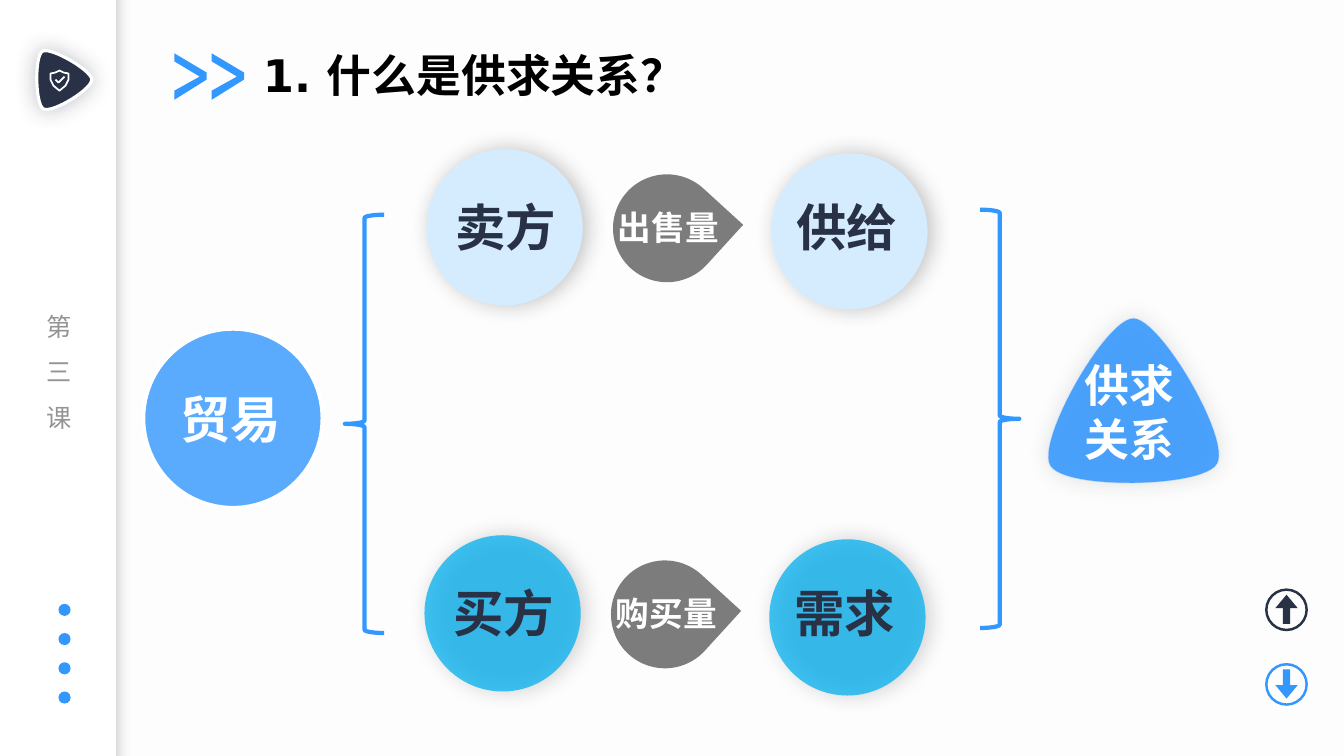
from lxml.etree import SubElement
from pptx import Presentation
from pptx.dml.color import RGBColor
from pptx.enum.shapes import MSO_SHAPE
from pptx.enum.text import MSO_ANCHOR, MSO_AUTO_SIZE, PP_ALIGN
from pptx.oxml.ns import qn
from pptx.util import Pt

EMU_PER_PX = 9144
COLORS = {
    "background": "FDFDFD", "white": "FFFFFF", "black": "000000",
    "blue": "3297FF", "navy": "283146", "pale": "D5EBFE", "cyan": "00B0F0",
    "gray": "7C7C7C", "label": "949494", "edge": "D9D9D9",
}


def px(length):
    """Turn px into EMU."""
    return round(length * EMU_PER_PX)


def rgb(name):
    """Look up a named colour."""
    return RGBColor.from_string(COLORS[name])


def set_alpha(shape, percent):
    """Make the colour set last on the shape partly transparent."""
    color = shape._element.spPr.findall(".//" + qn("a:srgbClr"))[-1]
    SubElement(color, qn("a:alpha")).set("val", str(percent * 1000))


def style(shape, fill=None, alpha=None, line=None, weight=1, line_alpha=None, shadow=None):
    """Set fill, line and shadow of a shape."""
    if fill:
        shape.fill.solid()
        shape.fill.fore_color.rgb = rgb(fill)
        if alpha:
            set_alpha(shape, alpha)
    else:
        shape.fill.background()
    if line:
        shape.line.color.rgb = rgb(line)
        shape.line.width = Pt(weight)
        if line_alpha:
            set_alpha(shape, line_alpha)
    else:
        shape.line.fill.background()
    shape.shadow.inherit = False
    if shadow:
        color, opacity, blur, distance = shadow
        effects = shape._element.spPr.find(qn("a:effectLst"))
        outer = SubElement(effects, qn("a:outerShdw"), blurRad=str(Pt(blur)),
                           dist=str(Pt(distance)), dir="0", algn="ctr", rotWithShape="0")
        SubElement(outer, qn("a:srgbClr"), val=COLORS[color])
        set_alpha(shape, opacity)
    return shape


def add_preset(slide, kind, left, top, width, height, **look):
    """Add a styled preset shape."""
    return style(slide.shapes.add_shape(kind, *map(px, (left, top, width, height))), **look)


def add_outline(slide, contours, closed=True, **look):
    """Add a styled freeform made of one or more contours."""
    builder = None
    for contour in contours:
        start, *rest = [(px(x), px(y)) for x, y in contour]
        if builder is None:
            builder = slide.shapes.build_freeform(*start)
        else:
            builder.move_to(*start)
        builder.add_line_segments(rest, close=closed)
    return style(builder.convert_to_shape(), **look)


def curve(points, steps=24):
    """Sample a chain of cubic curves given by end and control points."""
    sampled = [points[0]]
    for first in range(0, len(points) - 1, 3):
        a, b, c, d = points[first:first + 4]
        for step in range(1, steps + 1):
            t = step / steps
            s = 1 - t
            sampled.append(tuple(
                s**3 * a[i] + 3 * s * s * t * b[i] + 3 * s * t * t * c[i] + t**3 * d[i]
                for i in (0, 1)))
    return sampled


def format_font(paragraph, font, size, color, bold):
    """Format every run of a paragraph."""
    for run in paragraph.runs:
        run.font.name = font
        run.font.size = Pt(size)
        run.font.bold = bold
        run.font.color.rgb = rgb(color)


def add_label(slide, text, left, top, width, height, size, color, font="Arial", bold=True):
    """Add a wrapping text box."""
    frame = slide.shapes.add_textbox(*map(px, (left, top, width, height))).text_frame
    frame.word_wrap = True
    frame.text = text
    for paragraph in frame.paragraphs:
        format_font(paragraph, font, size, color, bold)
    return frame


def add_sidebar(slide):
    """Draw the left bar with its badge, lesson label and dots."""
    edge = add_preset(slide, MSO_SHAPE.RECTANGLE, 115, 0, 16, 750)
    edge.fill.gradient()
    edge.fill.gradient_angle = 0
    for stop, color in zip(edge.fill.gradient_stops, ("edge", "white")):
        stop.color.rgb = rgb(color)
    set_alpha(edge, 0)
    add_preset(slide, MSO_SHAPE.RECTANGLE, 0, 0, 115, 750, fill="white")
    for dot in range(4):
        add_preset(slide, MSO_SHAPE.OVAL, 58, 599 + 29 * dot, 12, 12, fill="blue")

    badge = [(42, 51), (50, 46), (91, 70), (91, 79), (91, 89),
             (51, 113), (43, 108), (35, 104), (34, 56), (42, 51)]
    add_outline(slide, [curve(badge)], fill="navy", line="white", weight=2.25,
                shadow=("navy", 29, 16, 0))
    shield = [(59, 70), (63, 72), (68, 73), (68, 79), (65, 85), (59, 90),
              (53, 85), (50, 79), (50, 73), (55, 72)]
    add_outline(slide, [shield], line="white", weight=1.25)
    add_outline(slide, [[(55, 79), (58, 82), (64, 76)]], closed=False, line="white", weight=1.25)

    lesson = add_label(slide, "第\n三\n课", 36, 289, 77, 146, 18, "label", "DejaVu Sans", False)
    for paragraph in lesson.paragraphs:
        paragraph.line_spacing = 1.5
        for run in paragraph.runs:
            run.font._element.set("spc", "100")


def add_title(slide):
    """Place the title and its double chevron."""
    title = slide.shapes.title
    title.left, title.top, title.width, title.height = map(px, (249, 42, 443, 64))
    frame = title.text_frame
    frame.text = "1. 什么是供求关系？"
    frame.word_wrap = False
    frame.auto_size = MSO_AUTO_SIZE.NONE
    frame.vertical_anchor = MSO_ANCHOR.TOP
    frame.paragraphs[0].alignment = PP_ALIGN.CENTER
    format_font(frame.paragraphs[0], "DejaVu Sans", 32, "black", True)
    chevron = [(173, 53), (205, 72), (205, 79), (173, 99), (173, 90), (198, 76), (173, 61)]
    add_outline(slide, [[(x + shift, y) for x, y in chevron] for shift in (0, 37)], fill="blue")


def add_trade_row(slide, left, top, party, amount, result, **look):
    """Draw one row: party, traded amount and resulting market side."""
    for name, dx, dy, text_dx in ((party, 0, 0, 19), (result, 342, 4, 357)):
        add_preset(slide, MSO_SHAPE.OVAL, left + dx, top + dy, 155, 155,
                   shadow=("black", 23, 16, 3), **look)
        add_label(slide, name, left + text_dx, top + 42, 123, 71, 36, "navy")
    drop = add_preset(slide, MSO_SHAPE.TEAR, left + 185, top + 25, 107, 107, fill="gray")
    drop.rotation = 42.4
    add_label(slide, amount, left + 180, top + 52, 123, 50, 24, "white")


def add_nav_button(slide, top, arrow, color):
    """Draw a ringed arrow."""
    add_preset(slide, MSO_SHAPE.OVAL, 1256, top, 40, 40, line=color, weight=1.75)
    pointer = add_preset(slide, arrow, 1265, top + 5, 22, 29, fill=color)
    pointer.adjustments[0] = 0.32
    pointer.adjustments[1] = 0.6


def main():
    """Build the supply and demand slide."""
    deck = Presentation()
    deck.slide_width, deck.slide_height = px(1333), px(750)
    slide = deck.slides.add_slide(deck.slide_layouts[5])
    slide.background.fill.solid()
    slide.background.fill.fore_color.rgb = rgb("background")

    add_sidebar(slide)
    add_nav_button(slide, 659, MSO_SHAPE.DOWN_ARROW, "blue")
    add_nav_button(slide, 585, MSO_SHAPE.UP_ARROW, "navy")
    add_title(slide)

    add_preset(slide, MSO_SHAPE.LEFT_BRACE, 342, 213, 39, 415, line="blue", weight=3)
    add_preset(slide, MSO_SHAPE.RIGHT_BRACE, 972, 208, 39, 415, line="blue", weight=3)
    add_preset(slide, MSO_SHAPE.OVAL, 142, 326, 178, 178, fill="blue", alpha=80,
               line="white", weight=3)
    add_label(slide, "贸易", 169, 380, 123, 71, 36, "white")
    add_trade_row(slide, 423, 148, "卖方", "出售量", "供给", fill="pale")
    add_trade_row(slide, 421, 531, "买方", "购买量", "需求", fill="cyan", alpha=74)

    relation = [(1124, 316), (1151, 316), (1221, 436), (1207, 460), (1194, 484),
                (1056, 486), (1042, 462), (1027, 439), (1096, 317), (1124, 316)]
    add_outline(slide, [curve(relation)], fill="blue", alpha=87, line="blue",
                line_alpha=20, shadow=("navy", 17, 16, 0))
    add_label(slide, "供求关系", 1066, 350, 123, 118, 32, "white")
    deck.save("out.pptx")


if __name__ == "__main__":
    main()
